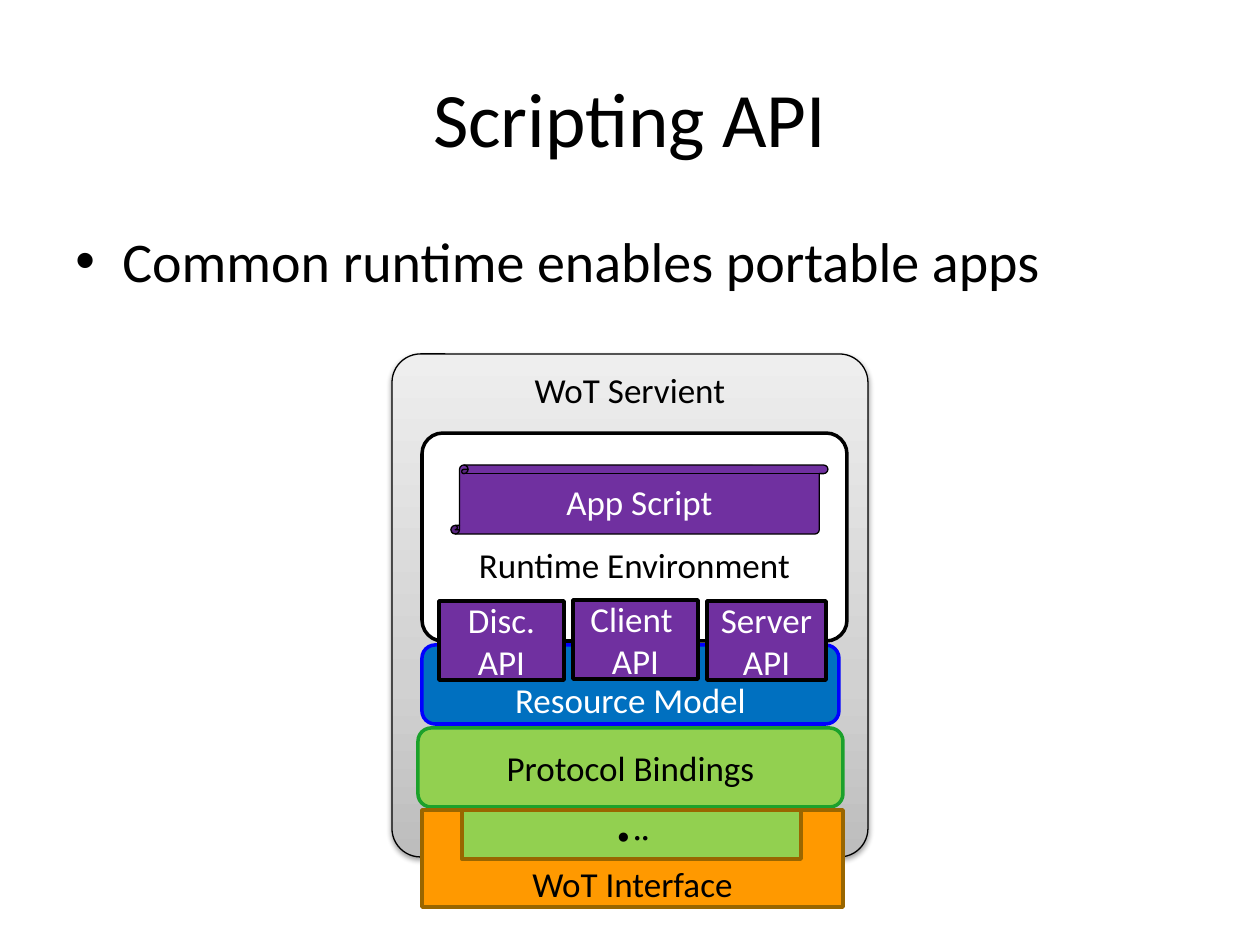
import copy
import pptx
import pptx.util
import pptx.dml.color
import pptx.enum.shapes
import pptx.enum.text
import pptx.oxml
import pptx.oxml.ns
from lxml import etree

HUE = {"black": "000000", "white": "FFFFFF", "plum": "7030A0", "lime": "92D050",
       "green": "1BA12B", "blue": "0070C0", "navy": "0000FF", "amber": "FF9900",
       "brown": "996600", "dark": "BDBDBD", "mid": "D1D1D1", "pale": "EEEEEE"}

TITLE = "Scripting API"
POINT = "Common runtime enables portable apps"

# Stack parts, back to front:
# text, preset, box px, corner, fill, line, line pt, ink, anchor, bottom inset px
STACK = [
    ("WoT Servient", "ROUNDED_RECTANGLE", (392, 354, 476, 503), 0.06,
     None, "black", 0.75, "black", "TOP", 6),
    ("Runtime Environment", "ROUNDED_RECTANGLE", (422, 433, 425, 208), 0.1,
     "white", "black", 2, "black", "BOTTOM", 49),
    ("App Script", "VERTICAL_SCROLL", (451, 465, 377, 69), None,
     "plum", "black", 0.75, "white", "MIDDLE", 6),
    ("Protocol Bindings", "ROUNDED_RECTANGLE", (418, 728, 425, 79), None,
     "lime", "green", 2, "black", "MIDDLE", 6),
    ("Resource Model", "ROUNDED_RECTANGLE", (422, 645, 417, 79), None,
     "blue", "navy", 2, "white", "BOTTOM", 0),
]
APIS = [("Client \nAPI", (573, 600, 125, 79)),
        ("Server\nAPI", (707, 601, 119, 79)),
        ("Disc.\nAPI", (439, 601, 125, 79))]
STACK += [(text, "ROUNDED_RECTANGLE", box, 0, "plum", "black", 2, "white", "MIDDLE", 6)
          for text, box in APIS]

NOTCH = [(422, 810), (471, 810), (471, 859), (790, 859),
         (790, 810), (843, 810), (843, 907), (422, 907)]

SCALE = 914400 // 126
NOWRAP = ("WoT Servient", "App Script")


def px(n):
    return pptx.util.Emu(n * SCALE)


def rgb(name):
    return pptx.dml.color.RGBColor.from_string(HUE[name])


def write(shape, text, size, ink, anchor, low=6, align="CENTER"):
    frame = shape.text_frame
    frame.word_wrap = text not in NOWRAP
    frame.vertical_anchor = getattr(pptx.enum.text.MSO_ANCHOR, anchor)
    frame.margin_bottom = px(low)
    para = frame.paragraphs[0]
    para.text = text
    para.alignment = getattr(pptx.enum.text.PP_ALIGN, align)
    for run in para.runs:
        run.font.size = pptx.util.Pt(size)
        run.font.name = "Calibri"
        run.font.color.rgb = rgb(ink)
    return para


def paint(shape, fill, line, width):
    shape.shadow.inherit = False
    if fill:
        shape.fill.solid()
        shape.fill.fore_color.rgb = rgb(fill)
    shape.line.color.rgb = rgb(line)
    shape.line.width = pptx.util.Pt(width)


def shade(shape):
    """Three-stop grey gradient and a soft shadow below."""
    shape.fill.gradient()
    shape.fill.gradient_angle = 90
    first = shape._element.spPr.find(".//" + pptx.oxml.ns.qn("a:gs"))
    first.addnext(copy.deepcopy(first))
    tones = (("dark", 0), ("mid", 0.35), ("pale", 1))
    for stop, (tone, pos) in zip(shape.fill.gradient_stops, tones):
        stop.color.rgb = rgb(tone)
        stop.position = pos
    glow = shape._element.spPr.find(pptx.oxml.ns.qn("a:effectLst"))
    glow.append(pptx.oxml.parse_xml(
        '<a:outerShdw %s blurRad="40000" dist="20000" dir="5400000" rotWithShape="0">'
        '<a:srgbClr val="000000"><a:alpha val="38000"/></a:srgbClr></a:outerShdw>'
        % pptx.oxml.ns.nsdecls("a")))


def main():
    deck = pptx.Presentation()
    deck.slide_width, deck.slide_height = px(1260), px(945)
    shapes = deck.slides.add_slide(deck.slide_layouts[6]).shapes

    # Title and bullet
    head = shapes.add_textbox(*map(px, (63, 38, 1134, 157)))
    write(head, TITLE, 44, "black", "MIDDLE")
    body = shapes.add_textbox(*map(px, (63, 220, 1134, 624)))
    para = write(body, POINT, 32, "black", "TOP", align="LEFT")
    para.space_before = pptx.util.Pt(6.4)
    props = para._p.get_or_add_pPr()
    props.set("marL", str(px(47)))
    props.set("indent", str(px(-47)))
    etree.SubElement(props, pptx.oxml.ns.qn("a:buFont")).set("typeface", "Arial")
    etree.SubElement(props, pptx.oxml.ns.qn("a:buChar")).set("char", "•")

    # Servient stack
    group = shapes.add_group_shape()
    for text, kind, box, bend, fill, line, width, ink, anchor, low in STACK:
        preset = getattr(pptx.enum.shapes.MSO_SHAPE, kind)
        part = group.shapes.add_shape(preset, *map(px, box))
        if bend is not None:
            part.adjustments[0] = bend
        paint(part, fill, line, width)
        if not fill:
            shade(part)
        write(part, text, 20, ink, anchor, low)

    # Interface with its notch, and the binding that fits in it
    path = shapes.build_freeform(*NOTCH[0], scale=SCALE)
    path.add_line_segments(NOTCH[1:], close=True)
    port = path.convert_to_shape()
    paint(port, "amber", "brown", 2)
    write(port, "WoT Interface", 20, "black", "BOTTOM", 2)
    plug = shapes.add_shape(pptx.enum.shapes.MSO_SHAPE.RECTANGLE,
                            *map(px, (462, 810, 339, 49)))
    paint(plug, "lime", "brown", 2.25)
    write(plug, "∙··", 18, "black", "MIDDLE")

    deck.save("out.pptx")


if __name__ == "__main__":
    main()
